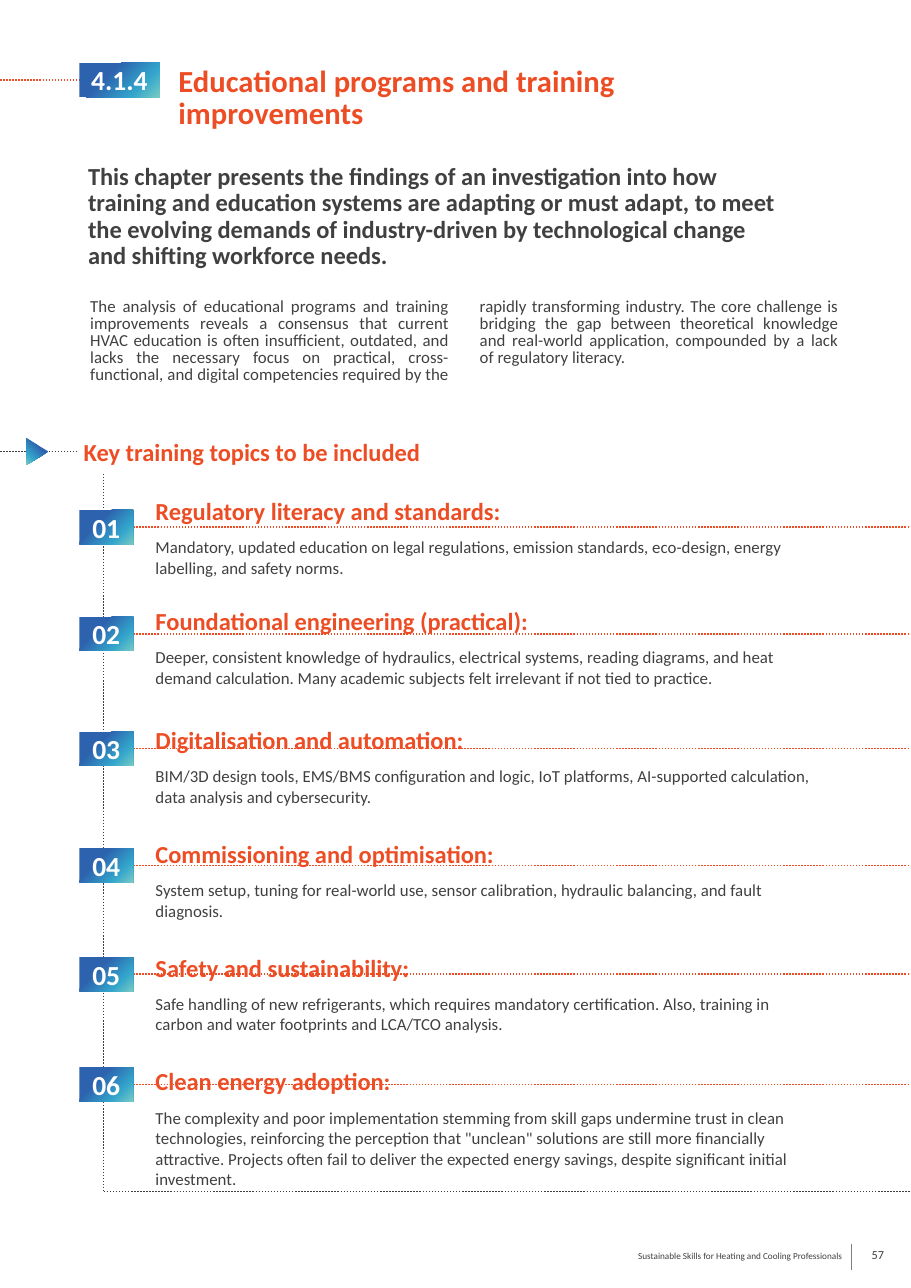
from lxml import etree
from pptx import Presentation
from pptx.dml.color import RGBColor
from pptx.enum.dml import MSO_LINE
from pptx.enum.shapes import MSO_CONNECTOR, MSO_SHAPE
from pptx.enum.text import MSO_ANCHOR, MSO_AUTO_SIZE, PP_ALIGN
from pptx.oxml.ns import qn
from pptx.util import Cm, Pt

ORANGE = RGBColor(0xED, 0x4D, 0x24)
DARK = RGBColor(0x40, 0x40, 0x40)
GREY = RGBColor(0x80, 0x80, 0x80)
WHITE = RGBColor(0xFF, 0xFF, 0xFF)
LEFT, CENTER, RIGHT, JUSTIFY = (PP_ALIGN.LEFT, PP_ALIGN.CENTER,
                                PP_ALIGN.RIGHT, PP_ALIGN.JUSTIFY)
TOP, MIDDLE = MSO_ANCHOR.TOP, MSO_ANCHOR.MIDDLE
DOTTED = MSO_LINE.ROUND_DOT
GRADIENT = [(35, "2D62AE"), (74, "33A5CC"), (100, "77CBC4")]

SECTION = "4.1.4"
TITLE = "Educational programs and training improvements"
INTRO = ("This chapter presents the findings of an investigation into how training and "
         "education systems are adapting or must adapt, to meet the evolving demands of "
         "industry-driven by technological change and shifting workforce needs.")
ANALYSIS = ("The analysis of educational programs and training improvements reveals a "
            "consensus that current HVAC education is often insufficient, outdated, and "
            "lacks the necessary focus on practical, cross-functional, and digital "
            "competencies required by the rapidly transforming industry. The core challenge "
            "is bridging the gap between theoretical knowledge and real-world application, "
            "compounded by a lack of regulatory literacy.")
KEY_HEADING = "Key training topics to be included"
FOOTER = "Sustainable Skills for Heating and Cooling Professionals"
PAGE_NUMBER = "57"

# badge top (cm), space before heading (pt), heading, description
TOPICS = [
    (11.76, 0, "Regulatory literacy and standards:",
     "Mandatory, updated education on legal regulations, emission standards, eco-design, "
     "energy labelling, and safety norms."),
    (14.22, 24.4, "Foundational engineering (practical):",
     "Deeper, consistent knowledge of hydraulics, electrical systems, reading diagrams, and "
     "heat demand calculation. Many academic subjects felt irrelevant if not tied to practice."),
    (16.87, 30.5, "Digitalisation and automation:",
     "BIM/3D design tools, EMS/BMS configuration and logic, IoT platforms, AI-supported "
     "calculation, data analysis and cybersecurity."),
    (19.56, 26.8, "Commissioning and optimisation:",
     "System setup, tuning for real-world use, sensor calibration, hydraulic balancing, and "
     "fault diagnosis."),
    (22.07, 26.8, "Safety and sustainability:",
     "Safe handling of new refrigerants, which requires mandatory certification. Also, "
     "training in carbon and water footprints and LCA/TCO analysis."),
    (24.61, 26.8, "Clean energy adoption:",
     "The complexity and poor implementation stemming from skill gaps undermine trust in "
     "clean technologies, reinforcing the perception that \"unclean\" solutions are still more "
     "financially attractive. Projects often fail to deliver the expected energy savings, "
     "despite significant initial investment."),
]

PAGE_WIDTH, PAGE_HEIGHT = 21, 29.7
BADGE_LEFT, BADGE_WIDTH, BADGE_HEIGHT = 1.83, 1.24, 0.79
RAIL_X, RAIL_TOP, RAIL_BOTTOM = 2.39, 10.92, 27.48


def set_attributes(target, values):
    for name, value in values.items():
        setattr(target, name, value)


def write(paragraph, text, size, color, bold=False, **layout):
    paragraph.text = text
    set_attributes(paragraph, {"alignment": LEFT, "space_before": Pt(0), **layout})
    font = paragraph.runs[0].font
    set_attributes(font, {"name": "Calibri", "size": Pt(size), "bold": bold})
    font.color.rgb = color


def place(shape, left, top, width, height):
    set_attributes(shape, {"left": Cm(left), "top": Cm(top),
                           "width": Cm(width), "height": Cm(height)})


def set_frame(shape, anchor=TOP):
    set_attributes(shape.text_frame, {"word_wrap": True, "vertical_anchor": anchor,
                                      "auto_size": MSO_AUTO_SIZE.NONE})


def add_text(slide, box, text, size, color, bold=False, anchor=TOP, **layout):
    shape = slide.shapes.add_textbox(*map(Cm, box))
    set_frame(shape, anchor)
    write(shape.text_frame.paragraphs[0], text, size, color, bold, **layout)
    return shape


def add_line(slide, start, end, color, width=1, dash=DOTTED):
    line = slide.shapes.add_connector(MSO_CONNECTOR.STRAIGHT, *map(Cm, start + end))
    line.line.color.rgb = color
    set_attributes(line.line, {"width": Pt(width), "dash_style": dash})
    etree.SubElement(line._element.spPr, qn("a:effectLst"))


def add_gradient_shape(slide, kind, *box):
    shape = slide.shapes.add_shape(kind, *map(Cm, box))
    shape.shadow.inherit = False
    shape.line.fill.background()
    shape.fill.gradient()
    shape.fill.gradient_angle = 315
    stops = shape._element.spPr.find(".//" + qn("a:gsLst"))
    for stop in list(stops):
        stops.remove(stop)
    for position, color in GRADIENT:
        stop = etree.SubElement(stops, qn("a:gs"), pos=str(position * 1000))
        etree.SubElement(stop, qn("a:srgbClr"), val=color)
    return shape


def add_badge(slide, top, text, width=BADGE_WIDTH):
    badge = add_gradient_shape(slide, MSO_SHAPE.RECTANGLE,
                               BADGE_LEFT, top, width, BADGE_HEIGHT)
    set_frame(badge, MIDDLE)
    set_attributes(badge.text_frame, dict.fromkeys(
        ("margin_left", "margin_right", "margin_top", "margin_bottom"), 0))
    write(badge.text_frame.paragraphs[0], text, 18, WHITE, True, alignment=CENTER)


def add_header(slide):
    title = slide.shapes.title
    place(title, 3.86, 1.4, 14.05, 2.49)
    set_frame(title)
    write(title.text_frame.paragraphs[0], TITLE, 20, ORANGE, True, line_spacing=Pt(21))
    add_line(slide, (0, 1.85), (2.31, 1.85), ORANGE)
    add_badge(slide, 1.45, SECTION, 1.85)
    add_text(slide, (1.78, 3.66, 16.61, 3.28), INTRO, 16, DARK, True,
             line_spacing=Pt(17.2))
    analysis = add_text(slide, (1.83, 6.76, 17.75, 2.25), ANALYSIS, 11, DARK,
                        alignment=JUSTIFY, line_spacing=Pt(11.2))
    columns = analysis.text_frame._txBody.bodyPr
    columns.set("numCol", "2")
    columns.set("spcCol", str(Cm(0.71)))


def add_topics(slide):
    add_text(slide, (1.68, 10.03, 15.77, 0.86), KEY_HEADING, 16, ORANGE, True,
             line_spacing=Pt(17))
    add_line(slide, (0, 10.41), (1.78, 10.41), DARK)
    add_gradient_shape(slide, MSO_SHAPE.ISOSCELES_TRIANGLE,
                       0.56, 10.16, 0.61, 0.51).rotation = 90
    add_line(slide, (RAIL_X, RAIL_TOP), (RAIL_X, RAIL_BOTTOM), DARK)
    add_line(slide, (RAIL_X, RAIL_BOTTOM), (PAGE_WIDTH, RAIL_BOTTOM), DARK)

    body = slide.placeholders[1]
    place(body, 3.33, 11.51, 15.77, 17.09)
    set_frame(body)
    frame = body.text_frame
    for number, (top, gap, heading, description) in enumerate(TOPICS, 1):
        paragraph = frame.paragraphs[0] if number == 1 else frame.add_paragraph()
        write(paragraph, heading, 16, ORANGE, True,
              space_before=Pt(gap), line_spacing=Pt(13.4))
        write(frame.add_paragraph(), description, 11, DARK,
              space_before=Pt(7.3), line_spacing=Pt(13.4))
        middle = top + BADGE_HEIGHT / 2
        add_line(slide, (BADGE_LEFT + BADGE_WIDTH, middle), (PAGE_WIDTH, middle), ORANGE)
        add_badge(slide, top, f"{number:02}")
    for paragraph in frame.paragraphs:
        properties = paragraph._p.get_or_add_pPr()
        properties.set("marL", "0")
        properties.set("indent", "0")
        etree.SubElement(properties, qn("a:buNone"))


def add_footer(slide):
    add_text(slide, (6.15, 28.7, 13.51, 0.51), FOOTER, 6, DARK, alignment=RIGHT)
    add_line(slide, (19.63, 28.68), (19.63, 29.28), GREY, 0.75, MSO_LINE.SOLID)
    add_text(slide, (19.66, 28.55, 0.97, 0.76), PAGE_NUMBER, 8, DARK,
             anchor=MIDDLE, alignment=RIGHT)


def main():
    presentation = Presentation()
    presentation.slide_width, presentation.slide_height = Cm(PAGE_WIDTH), Cm(PAGE_HEIGHT)
    slide = presentation.slides.add_slide(presentation.slide_layouts[1])
    add_header(slide)
    add_topics(slide)
    add_footer(slide)
    presentation.save("out.pptx")


if __name__ == "__main__":
    main()
